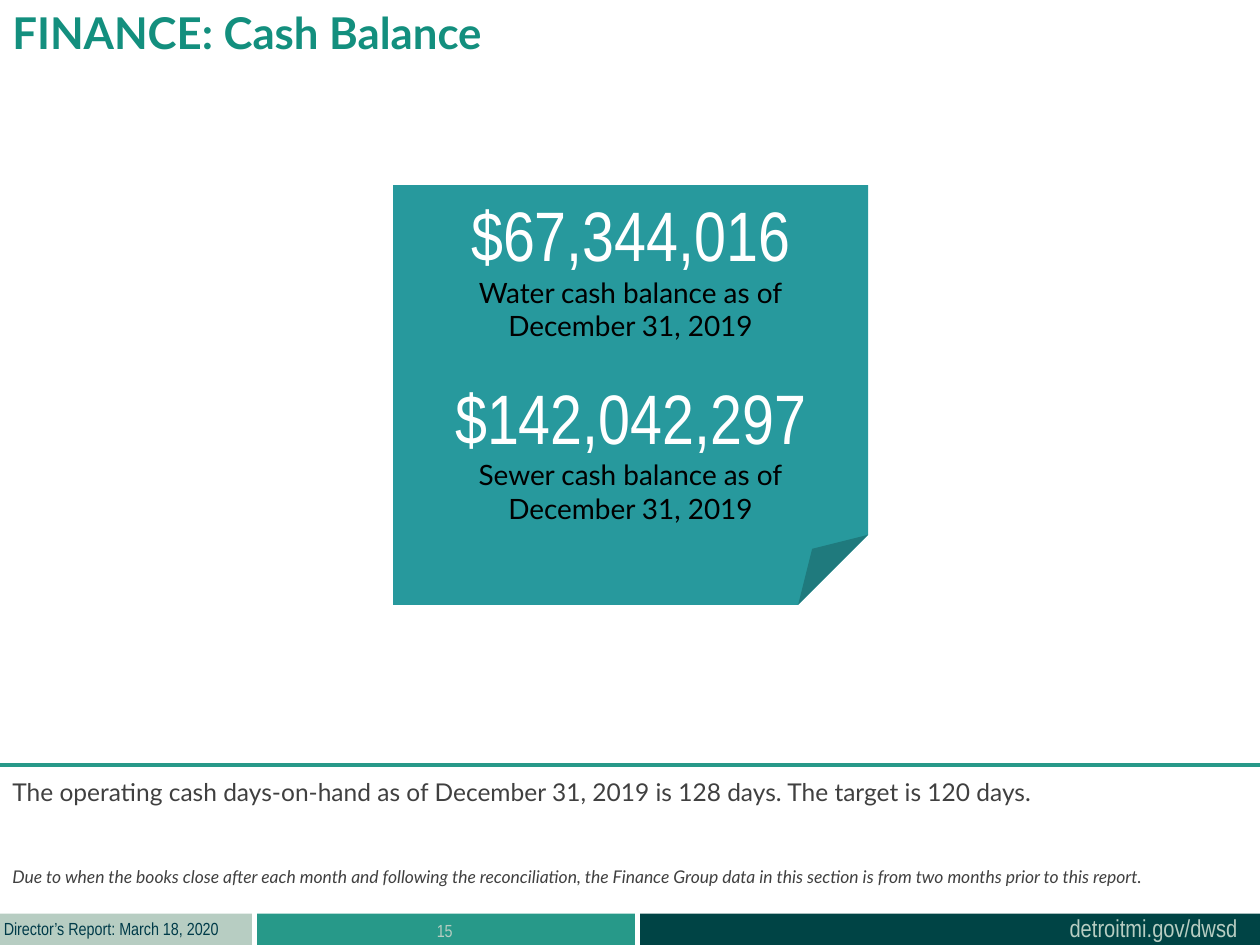
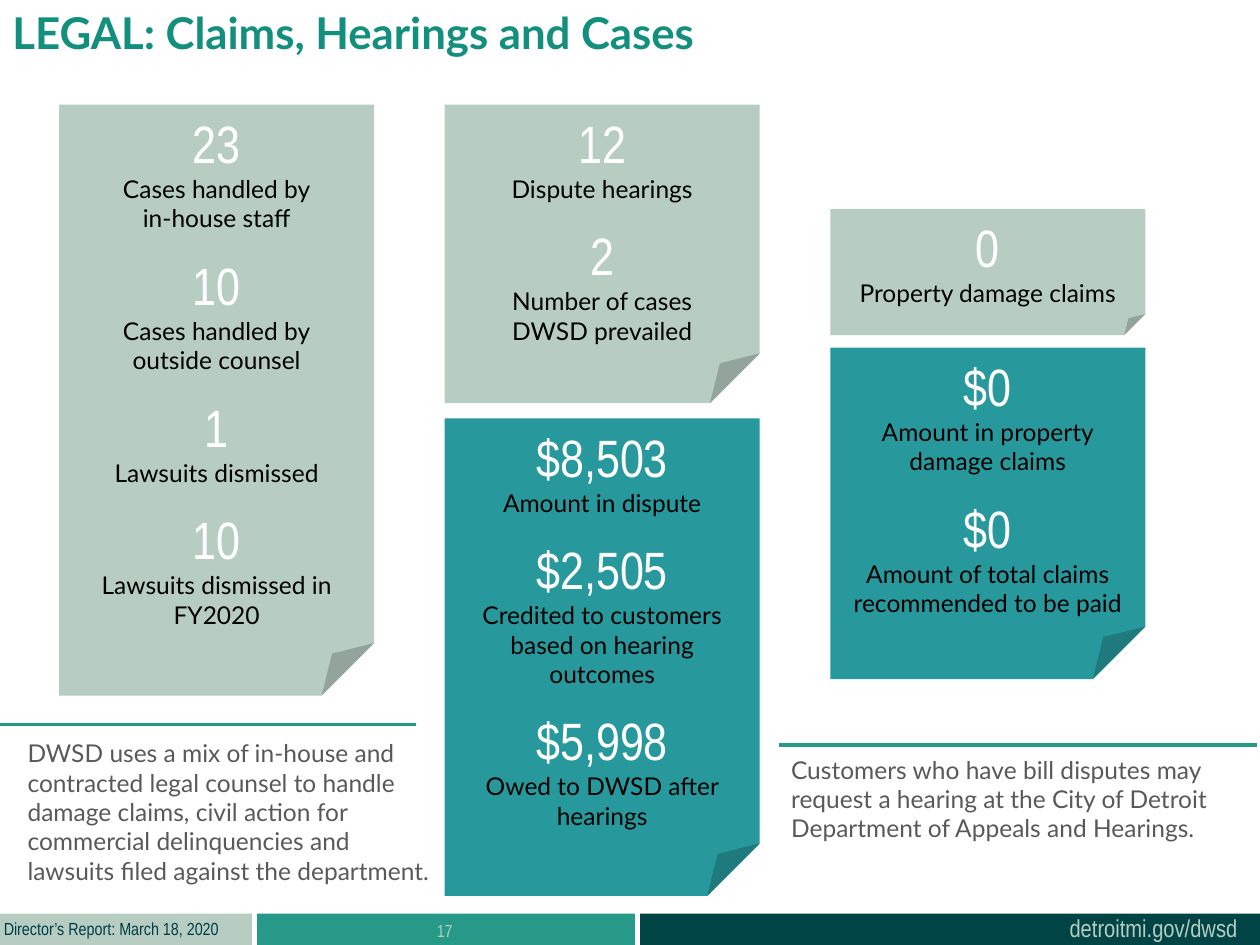
from copy import deepcopy
from dataclasses import dataclass
from lxml.etree import SubElement
from pptx import Presentation
from pptx.dml.color import RGBColor
from pptx.enum.shapes import MSO_CONNECTOR, MSO_SHAPE
from pptx.enum.text import MSO_ANCHOR, PP_ALIGN
from pptx.oxml.ns import qn
from pptx.util import Inches, Pt

COLS, ROWS = 10, 7.5
WIDE, HIGH = Inches(10), Inches(7.5)


@dataclass(frozen=True)
class Theme:
    """Hold the colours, fonts and type sizes."""
    green: str = "279989"
    teal: str = "27999D"
    sage: str = "B7CDC2"
    deep: str = "004445"
    navy: str = "003B49"
    head: str = "138F7E"
    dark: str = "404040"
    grey: str = "595959"
    white: str = "FFFFFF"
    black: str = "000000"
    sans: str = "Lato"
    slim: str = "Arial Narrow"
    title: int = 25
    body: int = 14
    small: int = 10
    rule: float = 2.25


@dataclass(frozen=True)
class Scale:
    """Hold the sizes of figure, label and gap on a card."""
    figure: int
    label: int
    gap: float


@dataclass(frozen=True)
class Box:
    """Hold a region in grid columns and rows."""
    x: float
    y: float
    w: float
    h: float

    def inner(self, x, y, w, h):
        """Return a region measured from this one's corner."""
        return Box(self.x + x, self.y + y, w, h)

    def place(self):
        """Return left, top, width and height on the slide."""
        return (int(self.x / COLS * WIDE), int(self.y / ROWS * HIGH),
                int(self.w / COLS * WIDE), int(self.h / ROWS * HIGH))


T = Theme()
PAGE = Box(0, 0, COLS, ROWS)
LARGE = Scale(40, 16, 18)
SMALL = Scale(30, 14, 11.5)


def rgb(code):
    """Turn a hex code into a colour."""
    return RGBColor.from_string(code)


def shape(slide, box, kind, fill):
    """Draw a flat shape without a line."""
    item = slide.shapes.add_shape(kind, *box.place())
    item.shadow.inherit = False
    item.fill.solid()
    item.fill.fore_color.rgb = rgb(fill)
    item.line.fill.background()
    return item


def frame(slide, box, wrap=True, left=0.1):
    """Add a text box and return its frame."""
    area = slide.shapes.add_textbox(*box.place()).text_frame
    area.word_wrap = wrap
    area.margin_left = Inches(left)
    return area


def write(area, text, size=T.body, font=T.sans, color=T.dark, bold=False,
          slant=False, align=PP_ALIGN.LEFT, space=0):
    """Add one formatted paragraph to a text frame."""
    para = area.paragraphs[0] if not area.text else area.add_paragraph()
    para.text = text
    para.alignment = align
    if space:
        para.space_before = Pt(space)
    for run in para.runs:
        run.font.size = Pt(size)
        run.font.name = font
        run.font.bold = bold
        run.font.italic = slant
        run.font.color.rgb = rgb(color)
    for stop in para._p.findall(qn("a:br")):
        stop.append(deepcopy(para.runs[0]._r.rPr))


def foot(slide, box, page):
    """Draw the three footer bands and their text."""
    for x, wide, fill in ((0, 2, T.sage), (2.04, 3, T.green),
                          (5.08, 4.92, T.deep)):
        shape(slide, box.inner(x, 0, wide, box.h), MSO_SHAPE.RECTANGLE, fill)
    write(frame(slide, box.inner(8.39, -0.05, 1.55, 0.34), wrap=False),
          "detroitmi.gov/dwsd", font=T.slim, color=T.sage)
    write(frame(slide, box.inner(0, -0.01, 1.91, 0.27), wrap=False, left=0.03),
          "Director’s Report: March 18, 2020", size=T.small, font=T.slim,
          color=T.navy)
    write(frame(slide, box.inner(2.03, 0, 3, box.h)), page, size=T.small,
          font=T.slim, color=T.sage, align=PP_ALIGN.CENTER)


def base(deck, title, page):
    """Add a blank slide with title and footer."""
    slide = deck.slides.add_slide(deck.slide_layouts[6])
    write(frame(slide, PAGE.inner(0, 0, 7.59, 0.77)), title, size=T.title,
          color=T.head, bold=True)
    foot(slide, PAGE.inner(0, 7.25, COLS, 0.25), page)
    return slide


def card(slide, box, fill, facts, scale):
    """Draw a folded card of figures with labels."""
    area = shape(slide, box, MSO_SHAPE.FOLDED_CORNER, fill).text_frame
    area.word_wrap = True
    area.vertical_anchor = MSO_ANCHOR.TOP
    for spot, (figure, label) in enumerate(facts):
        write(area, figure, size=scale.figure, font=T.slim, color=T.white,
              align=PP_ALIGN.CENTER, space=scale.gap if spot else 0)
        write(area, label, size=scale.label, color=T.black,
              align=PP_ALIGN.CENTER)


def stack(slide, box, cards, gap=0):
    """Place cards of given heights down one column."""
    top = 0
    for high, fill, facts in cards:
        card(slide, box.inner(0, top, box.w, high), fill, facts, SMALL)
        top += high + gap


def rule(slide, box):
    """Draw a line along the top of a region."""
    left, top, wide, _ = box.place()
    line = slide.shapes.add_connector(MSO_CONNECTOR.STRAIGHT, left, top,
                                      left + wide, top)
    line.line.color.rgb = rgb(T.green)
    line.line.width = Pt(T.rule)
    SubElement(line._element.spPr, qn("a:effectLst"))


def note(slide, box, text, inset, drop, wide, color):
    """Draw a rule with a remark below and return its frame."""
    rule(slide, box)
    area = frame(slide, box.inner(inset, drop, wide, box.h - drop))
    write(area, text, color=color)
    return area


def cash(deck):
    """Build the cash balance slide."""
    slide = base(deck, "FINANCE: Cash Balance", "15")
    facts = [(total, f"{kind} cash balance as of\nDecember 31, 2019")
             for total, kind in (("$67,344,016", "Water"),
                                 ("$142,042,297", "Sewer"))]
    card(slide, PAGE.inner(3.12, 1.47, 3.77, 3.33), T.teal, facts, LARGE)
    area = note(slide, PAGE.inner(0, 6.07, COLS, 1.03),
                "The operating cash days-on-hand as of December 31, 2019 is "
                "128 days. The target is 120 days.", 0, 0.05, COLS, T.dark)
    write(area, "Due to when the books close after each month and following "
          "the reconciliation, the Finance Group data in this section is from "
          "two months prior to this report.", size=T.small, slant=True,
          space=33.6)


def legal(deck):
    """Build the claims, hearings and cases slide."""
    slide = base(deck, "LEGAL: Claims, Hearings and Cases", "17")
    cases = [("23", "Cases handled by\nin-house staff"),
             ("10", "Cases handled by\noutside counsel"),
             ("1", "Lawsuits dismissed"),
             ("10", "Lawsuits dismissed in FY2020")]
    heard = [("12", "Dispute hearings"),
             ("2", "Number of cases\nDWSD prevailed")]
    owed = [("$8,503", "Amount in dispute"),
            ("$2,505", "Credited to customers based on hearing outcomes"),
            ("$5,998", "Owed to DWSD after hearings")]
    claims = [("0", "Property damage claims")]
    paid = [("$0", "Amount in property\ndamage claims"),
            ("$0", "Amount of total claims recommended to be paid")]
    piles = [(0.83, 0, [(4.69, T.sage, cases)]),
             (0.83, 0.12, [(2.37, T.sage, heard), (3.79, T.teal, owed)]),
             (1.66, 0.1, [(1, T.sage, claims), (2.63, T.teal, paid)])]
    for col, (top, gap, cards) in enumerate(piles):
        stack(slide, PAGE.inner(0.47 + 3.06 * col, top, 2.5, 6.3), cards, gap)
    note(slide, PAGE.inner(0, 5.75, 3.3, 1.34),
         "DWSD uses a mix of in-house and contracted legal counsel to handle "
         "damage claims, civil action for commercial delinquencies and "
         "lawsuits filed against the department.", 0.12, 0.06, 3.41, T.grey)
    note(slide, PAGE.inner(6.18, 5.91, 3.8, 0.84),
         "Customers who have bill disputes may request a hearing at the City "
         "of Detroit Department of Appeals and Hearings.", 0, 0.03, 3.82,
         T.grey)


def main():
    """Build and save the deck."""
    deck = Presentation()
    deck.slide_width, deck.slide_height = WIDE, HIGH
    cash(deck)
    legal(deck)
    deck.save("out.pptx")


if __name__ == "__main__":
    main()
